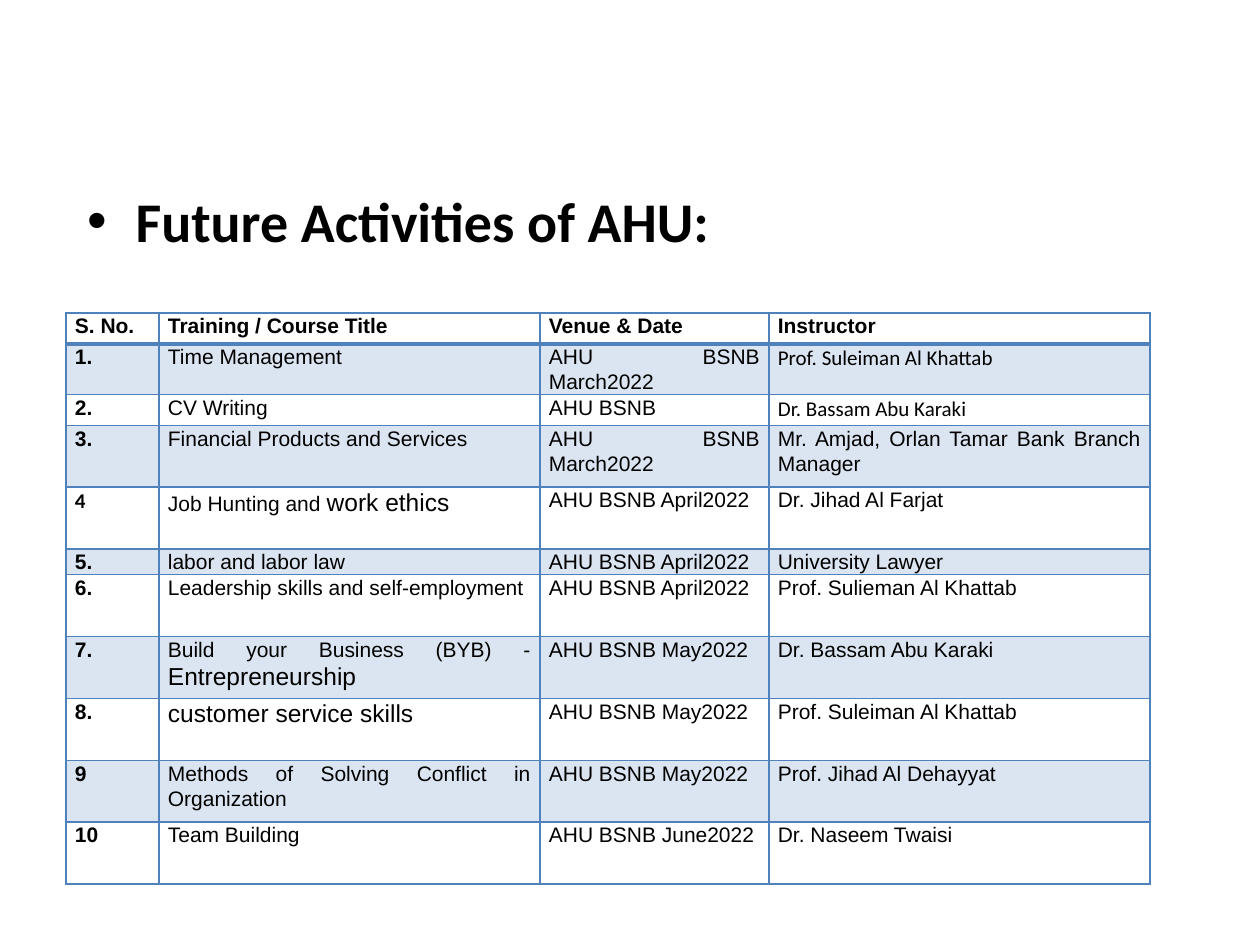
from dataclasses import dataclass

from pptx import Presentation
from pptx.dml.color import RGBColor
from pptx.enum.text import PP_ALIGN
from pptx.oxml.ns import qn
from pptx.util import Pt
from lxml import etree

LEFT, JUSTIFY = PP_ALIGN.LEFT, PP_ALIGN.JUSTIFY
EMU_PER_PX = 914400 / 126
COLORS = {"text": "000000", "accent": "4F81BD"}
BAND_ALPHA = 20
THIN, THICK = 1, 2.25
COL_WIDTHS = [93, 381, 229, 381]
HEADERS = ["S. No.", "Training / Course Title", "Venue & Date", "Instructor"]


@dataclass
class Activity:
    number: str
    title: str
    venue: str
    instructor: str
    height: int = 62
    large: str = ""  # end of the title, in larger type
    number_font: str = "Arial"
    instructor_font: str = "Arial"


ACTIVITIES = [
    Activity("1.", "Time Management", "AHU BSNB March2022",
             "Prof. Suleiman Al Khattab", 31, instructor_font="Calibri"),
    Activity("2.", "CV Writing", "AHU BSNB",
             "Dr. Bassam Abu Karaki", 31, instructor_font="Calibri"),
    Activity("3.", "Financial Products and Services", "AHU BSNB March2022",
             "Mr. Amjad, Orlan Tamar Bank Branch Manager"),
    Activity("4", "Job Hunting and ", "AHU BSNB April2022",
             "Dr. Jihad Al Farjat", large="work ethics", number_font="Calibri"),
    Activity("5.", "labor and labor law", "AHU BSNB April2022", "University Lawyer", 18),
    Activity("6.", "Leadership skills and self-employment", "AHU BSNB April2022",
             "Prof. Sulieman Al Khattab"),
    Activity("7.", "Build your Business (BYB) - ", "AHU BSNB May2022",
             "Dr. Bassam Abu Karaki", large="Entrepreneurship"),
    Activity("8.", "", "AHU BSNB May2022",
             "Prof. Suleiman Al Khattab", large="customer service skills"),
    Activity("9", "Methods of Solving Conflict in Organization", "AHU BSNB May2022",
             "Prof. Jihad Al Dehayyat"),
    Activity("10", "Team Building", "AHU BSNB June2022", "Dr. Naseem Twaisi"),
]


def px(n: int) -> int:
    return round(n * EMU_PER_PX)


def add_text(p, text: str, size=12, font="Arial", bold=False) -> None:
    r = p.add_run()
    r.text = text
    r.font.size = Pt(size)
    r.font.name = font
    r.font.bold = bold
    r.font.color.rgb = RGBColor.from_string(COLORS["text"])


def set_borders(cell, top: float, bottom: float) -> None:
    tcPr = cell._tc.get_or_add_tcPr()
    for side, width in zip("LRTB", (THIN, THIN, top, bottom)):
        ln = etree.SubElement(tcPr, qn(f"a:ln{side}"), w=str(Pt(width)))
        fill = etree.SubElement(ln, qn("a:solidFill"))
        etree.SubElement(fill, qn("a:srgbClr"), val=COLORS["accent"])


def set_fill(cell, banded: bool) -> None:
    if not banded:
        cell.fill.background()
        return
    cell.fill.solid()
    cell.fill.fore_color.rgb = RGBColor.from_string(COLORS["accent"])
    color = cell._tc.tcPr.find(f"{qn('a:solidFill')}/{qn('a:srgbClr')}")
    etree.SubElement(color, qn("a:alpha"), val=str(BAND_ALPHA * 1000))


def format_cell(cell, row: int, align=JUSTIFY):
    """Style a cell and return its paragraph."""
    cell.margin_left = cell.margin_right = px(9)
    cell.margin_top = cell.margin_bottom = 0
    set_borders(cell, THICK if row == 1 else THIN, THICK if row == 0 else THIN)
    set_fill(cell, row % 2 == 1)
    p = cell.text_frame.paragraphs[0]
    p.alignment = align
    p.line_spacing = 1.07
    return p


def add_activity(table, row: int, a: Activity) -> None:
    number, title, venue, instructor = (
        format_cell(cell, row, LEFT if col == 0 else JUSTIFY)
        for col, cell in enumerate(table.rows[row].cells))
    add_text(number, a.number, font=a.number_font, bold=True)
    if a.title:
        add_text(title, a.title)
    if a.large:
        add_text(title, a.large, size=14)
    add_text(venue, a.venue)
    add_text(instructor, a.instructor, font=a.instructor_font)


def add_heading(s) -> None:
    title = s.shapes.title
    title.element.getparent().remove(title.element)
    body = s.placeholders[1]
    body.left, body.top, body.width, body.height = px(60), px(180), px(1134), px(624)
    p = body.text_frame.paragraphs[0]
    pPr = p._p.get_or_add_pPr()
    pPr.set("marL", str(px(63)))
    pPr.set("indent", str(px(-48)))
    p.space_before = Pt(0)
    add_text(p, "Future Activities of AHU:", size=32, font="Calibri", bold=True)


def add_schedule(s) -> None:
    heights = [31] + [a.height for a in ACTIVITIES]
    table = s.shapes.add_table(len(heights), len(COL_WIDTHS), px(66), px(313),
                               px(sum(COL_WIDTHS)), px(sum(heights))).table
    table.first_row = table.horz_banding = False
    for column, width in zip(table.columns, COL_WIDTHS):
        column.width = px(width)
    for row, height in zip(table.rows, heights):
        row.height = px(height)
    for cell, text in zip(table.rows[0].cells, HEADERS):
        add_text(format_cell(cell, 0), text, bold=True)
    for row, activity in enumerate(ACTIVITIES, start=1):
        add_activity(table, row, activity)


def main() -> None:
    prs = Presentation()
    prs.slide_width, prs.slide_height = px(1260), px(945)
    s = prs.slides.add_slide(prs.slide_layouts[1])
    add_heading(s)
    add_schedule(s)
    prs.save("out.pptx")


if __name__ == "__main__":
    main()
